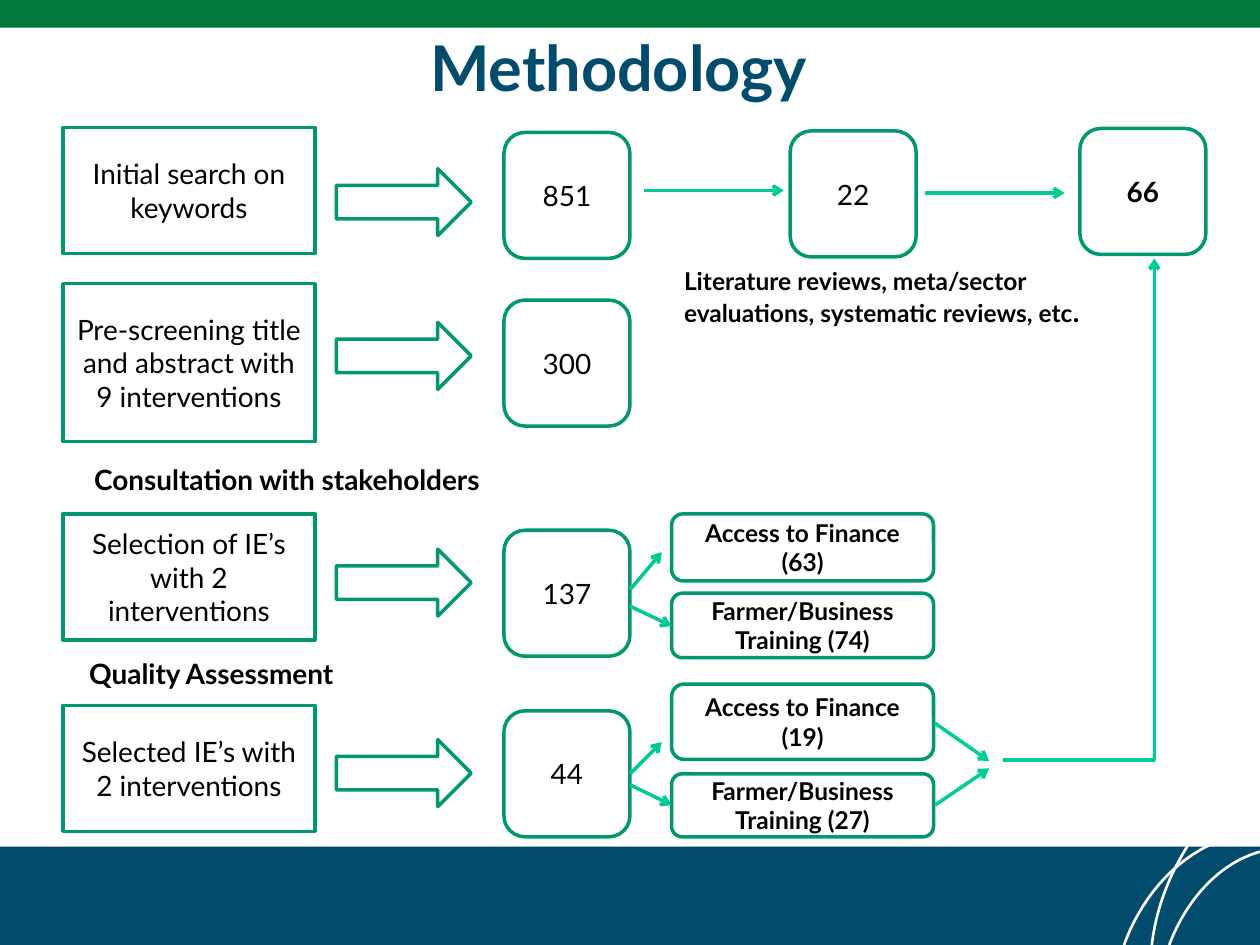
import pptx
import pptx.util
import pptx.dml.color
import pptx.enum.shapes
import pptx.enum.text
import pptx.oxml.ns
from dataclasses import dataclass
from lxml import etree
from pptx.util import Cm, Pt

SHAPE = pptx.enum.shapes.MSO_SHAPE
LINK = pptx.enum.shapes.MSO_CONNECTOR
ALIGN = pptx.enum.text.PP_ALIGN
ANCHOR = pptx.enum.text.MSO_ANCHOR
FONT = "Lato"
COLOURS = {
    "navy": "014C6D", "green": "00783C", "outline": "009771",
    "branch": "00C896", "flow": "00CC99", "white": "FFFFFF", "black": "000000",
}


@dataclass
class Step:
    """One row of the method: a label, a block arrow and a count."""
    label: str
    count: str
    label_top: float
    label_height: float
    arrow_top: float
    count_top: float


@dataclass
class Result:
    text: str
    top: float
    height: float


@dataclass
class Arrow:
    start: tuple[float, float]
    end: tuple[float, float]
    colour: str = "flow"
    bent: bool = False


@dataclass
class Caption:
    left: float
    top: float
    width: float
    height: float
    lines: list[list[tuple[str, float]]]


STEPS = [
    Step("Initial search on keywords", "851", 2.57, 2.54, 3.4, 2.67),
    Step("Pre-screening title and abstract with 9 interventions", "300", 5.72, 3.18, 6.5, 6.05),
    Step("Selection of IE’s with 2 interventions", "137", 10.36, 2.54, 11.07, 10.69),
    Step("Selected IE’s with 2 interventions", "44", 14.22, 2.54, 14.91, 14.33),
]
RESULTS = [
    Result("Access to Finance (63)", 10.36, 1.35),
    Result("Farmer/Business Training (74)", 11.96, 1.3),
    Result("Access to Finance (19)", 13.79, 1.52),
    Result("Farmer/Business Training (27)", 15.6, 1.27),
]
ARROWS = [
    Arrow((12.7, 11.89), (13.34, 11.13), "branch"),
    Arrow((12.7, 12.22), (13.54, 12.62), "branch"),
    Arrow((12.7, 15.6), (13.34, 14.96), "branch"),
    Arrow((12.7, 15.82), (13.54, 16.23), "branch"),
    Arrow((12.98, 3.84), (15.8, 3.84)),
    Arrow((18.64, 3.89), (21.46, 3.89)),
    Arrow((18.85, 14.58), (19.94, 15.34)),
    Arrow((18.85, 16.23), (19.94, 15.49)),
    Arrow((20.22, 15.32), (23.27, 5.21), bent=True),
]
CAPTIONS = [
    Caption(1.65, 9.19, 8.79, 0.94, [[("Consultation with stakeholders", 16)]]),
    Caption(1.55, 13.11, 5.97, 0.94, [[("Quality Assessment", 16)]]),
    Caption(13.54, 5.23, 9.37, 1.55, [
        [("Literature reviews, meta/sector", 14)],
        [("evaluations, systematic reviews, etc", 14), (".", 16)],
    ]),
]
# Four Bezier control points for each white arc in the footer
ARCS = [
    [(24.38, 17.04), (23.62, 17.4), (22.99, 18.14), (22.66, 19.05)],
    [(25.4, 17.17), (24.59, 17.4), (23.93, 18.11), (23.57, 19.05)],
    [(23.95, 17.04), (23.6, 17.6), (23.32, 18.24), (23.22, 19.05)],
]


def colour(name: str) -> pptx.dml.color.RGBColor:
    return pptx.dml.color.RGBColor.from_string(COLOURS[name])


def add_run(para, text: str, size: float, bold: bool, ink: str = "black") -> None:
    span = para.add_run()
    span.text = text
    span.font.name = FONT
    span.font.size = Pt(size)
    span.font.bold = bold
    span.font.color.rgb = colour(ink)


def add_block(page, kind, left: float, top: float, width: float, height: float,
              fill: str = "white", outline: bool = True):
    block = page.shapes.add_shape(kind, Cm(left), Cm(top), Cm(width), Cm(height))
    block.shadow.inherit = False
    block.fill.solid()
    block.fill.fore_color.rgb = colour(fill)
    if outline:
        block.line.color.rgb = colour("outline")
        block.line.width = Pt(2)
    else:
        block.line.fill.background()
    return block


def add_label(block, text: str, size: float = 16, bold: bool = False) -> None:
    frame = block.text_frame
    frame.word_wrap = True
    frame.vertical_anchor = ANCHOR.MIDDLE
    para = frame.paragraphs[0]
    para.alignment = ALIGN.CENTER
    add_run(para, text, size, bold)


def add_count(page, text: str, left: float, top: float, bold: bool = False) -> None:
    block = add_block(page, SHAPE.ROUNDED_RECTANGLE, left, top, 2.54, 2.54)
    add_label(block, text, bold=bold)


def add_arrow(page, arrow: Arrow) -> None:
    kind = LINK.ELBOW if arrow.bent else LINK.STRAIGHT
    link = page.shapes.add_connector(kind, *map(Cm, arrow.start + arrow.end))
    link.line.color.rgb = colour(arrow.colour)
    link.line.width = Pt(2)
    properties = link._element.spPr
    if arrow.bent:  # a single corner: across, then up
        properties.find(pptx.oxml.ns.qn("a:prstGeom")).set("prst", "bentConnector2")
    etree.SubElement(link.line._get_or_add_ln(), pptx.oxml.ns.qn("a:tailEnd"), type="arrow")
    etree.SubElement(properties, pptx.oxml.ns.qn("a:effectLst"))


def add_caption(page, caption: Caption) -> None:
    box = page.shapes.add_textbox(Cm(caption.left), Cm(caption.top),
                                  Cm(caption.width), Cm(caption.height))
    frame = box.text_frame
    frame.word_wrap = False
    frame.auto_size = pptx.enum.text.MSO_AUTO_SIZE.SHAPE_TO_FIT_TEXT
    for index, line in enumerate(caption.lines):
        para = frame.add_paragraph() if index else frame.paragraphs[0]
        for text, size in line:
            add_run(para, text, size, True)


def add_arc(page, controls: list[tuple[float, float]], pieces: int = 24) -> None:
    points = []
    for index in range(pieces + 1):
        t = index / pieces
        weights = ((1 - t) ** 3, 3 * t * (1 - t) ** 2, 3 * t * t * (1 - t), t ** 3)
        points.append(tuple(Cm(sum(w * c[axis] for w, c in zip(weights, controls)))
                            for axis in (0, 1)))
    builder = page.shapes.build_freeform(*points[0])
    builder.add_line_segments(points[1:], close=False)
    arc = builder.convert_to_shape()
    arc.shadow.inherit = False
    arc.fill.background()
    arc.line.color.rgb = colour("white")
    arc.line.width = Pt(1.5)


def main() -> None:
    deck = pptx.Presentation()
    deck.slide_width, deck.slide_height = Cm(25.4), Cm(19.05)
    page = deck.slides.add_slide(deck.slide_layouts[6])

    # Header and footer bands
    add_block(page, SHAPE.RECTANGLE, 0, 17.07, 25.4, 1.98, "navy", False)
    add_block(page, SHAPE.RECTANGLE, 0, 0, 25.4, 0.56, "green", False)
    for controls in ARCS:
        add_arc(page, controls)

    # Title
    title = page.shapes.add_textbox(Cm(1.68), Cm(0.56), Cm(21.59), Cm(1.57))
    title.text_frame.word_wrap = True
    title.text_frame.vertical_anchor = ANCHOR.MIDDLE
    heading = title.text_frame.paragraphs[0]
    heading.alignment = ALIGN.CENTER
    add_run(heading, "Methodology", 36, True, "navy")

    # Method rows
    for step in STEPS:
        label = add_block(page, SHAPE.RECTANGLE, 1.27, step.label_top, 5.08, step.label_height)
        add_label(label, step.label)
        add_block(page, SHAPE.RIGHT_ARROW, 6.78, step.arrow_top, 2.72, 1.35)
        add_count(page, step.count, 10.16, step.count_top)

    # Review counts and results by intervention
    add_count(page, "22", 15.93, 2.64)
    add_count(page, "66", 21.77, 2.59, bold=True)
    for result in RESULTS:
        block = add_block(page, SHAPE.ROUNDED_RECTANGLE, 13.54, result.top, 5.28, result.height)
        add_label(block, result.text, 14, True)

    # Links and captions
    for arrow in ARROWS:
        add_arrow(page, arrow)
    for caption in CAPTIONS:
        add_caption(page, caption)
    deck.save("out.pptx")


if __name__ == "__main__":
    main()
